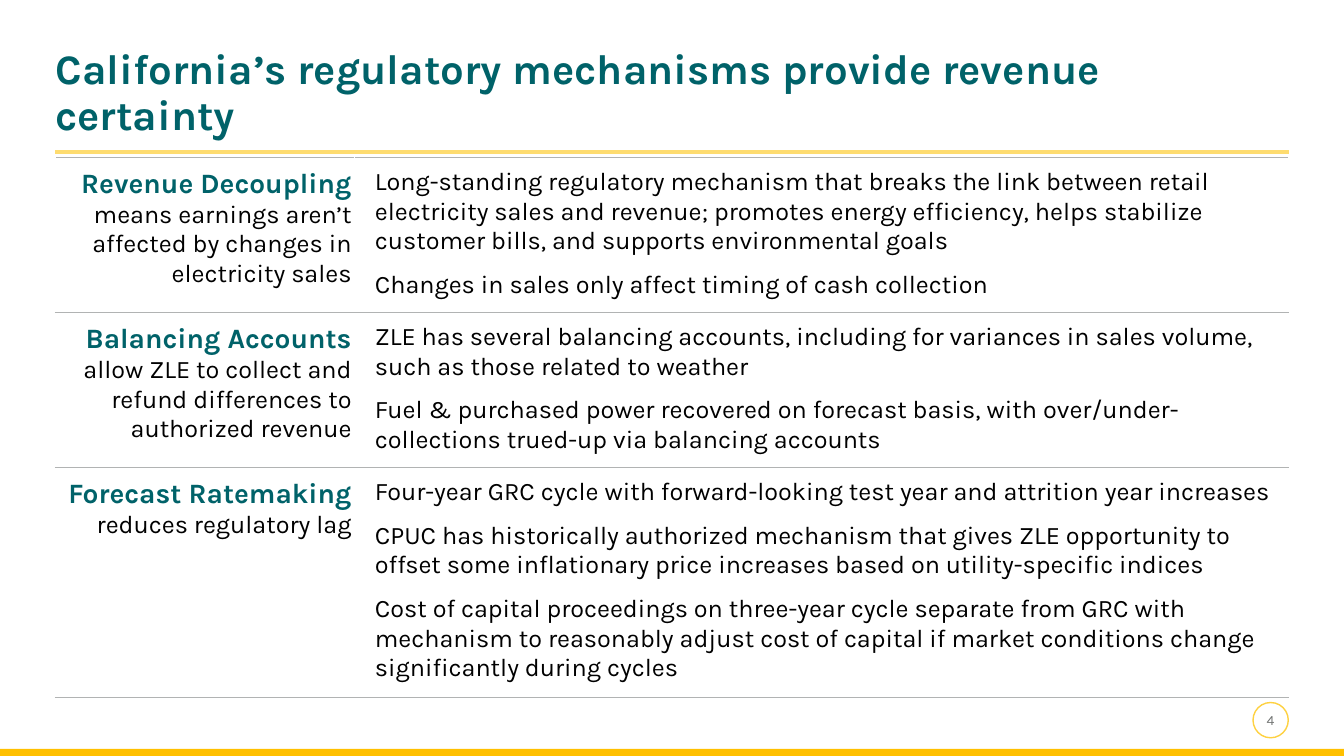
import pptx
import pptx.dml.color
import pptx.enum.shapes
import pptx.enum.text
import pptx.oxml.ns
import pptx.util
from lxml import etree

Pt = pptx.util.Pt
ALIGN = pptx.enum.text.PP_ALIGN
ANCHOR = pptx.enum.text.MSO_ANCHOR
SHAPE = pptx.enum.shapes.MSO_SHAPE

SLIDE_WIDTH, SLIDE_HEIGHT = 960, 540
MARGIN = 39.6
CONTENT_WIDTH = SLIDE_WIDTH - 2 * MARGIN
TEAL, BLACK, GRAY, WHITE = "006269", "000000", "707372", "FFFFFF"
RULE_GRAY, RULE_YELLOW, RING_YELLOW, GOLD = "B1B3B3", "FEDC70", "FED141", "FFC000"

MECHANISMS = [
    (108, "Revenue Decoupling",
     "means earnings aren’t affected by changes in electricity sales",
     ["Long-standing regulatory mechanism that breaks the link between retail "
      "electricity sales and revenue; promotes energy efficiency, helps stabilize "
      "customer bills, and supports environmental goals",
      "Changes in sales only affect timing of cash collection"]),
    (97.2, "Balancing Accounts",
     "allow ZLE to collect and refund differences to authorized revenue",
     ["ZLE has several balancing accounts, including for variances in sales volume, "
      "such as those related to weather",
      "Fuel & purchased power recovered on forecast basis, with over/under-collections "
      "trued-up via balancing accounts"]),
    (158.4, "Forecast Ratemaking",
     "reduces regulatory lag",
     ["Four-year GRC cycle with forward-looking test year and attrition year increases",
      "CPUC has historically authorized mechanism that gives ZLE opportunity to offset "
      "some inflationary price increases based on utility-specific indices",
      "Cost of capital proceedings on three-year cycle separate from GRC with mechanism "
      "to reasonably adjust cost of capital if market conditions change significantly "
      "during cycles"]),
]


def color(hex_code):
    return pptx.dml.color.RGBColor.from_string(hex_code)


def write(paragraph, text, size=18, ink=BLACK, bold=False, align=ALIGN.LEFT,
          before=0, spacing=None, font="Karla"):
    """Fill one paragraph with a formatted run."""
    paragraph.alignment = align
    paragraph.space_before = Pt(before)
    if spacing:
        paragraph.line_spacing = spacing
    run = paragraph.add_run()
    run.text = text
    run.font.name = font
    run.font.size = Pt(size)
    run.font.bold = bold
    run.font.color.rgb = color(ink)


def set_margins(holder, left, top, right, bottom):
    holder.margin_left, holder.margin_top = Pt(left), Pt(top)
    holder.margin_right, holder.margin_bottom = Pt(right), Pt(bottom)


def set_border(cell, side, ink, width):
    properties = cell._tc.get_or_add_tcPr()
    border = etree.SubElement(properties, pptx.oxml.ns.qn(f"a:ln{side}"), w=str(Pt(width)))
    fill = etree.SubElement(border, pptx.oxml.ns.qn("a:solidFill"))
    etree.SubElement(fill, pptx.oxml.ns.qn("a:srgbClr"), val=ink)


class SlideBuilder:
    def __init__(self, slide):
        self.shapes = slide.shapes

    def shape(self, kind, left, top, width, height, fill, line=None):
        shape = self.shapes.add_shape(kind, Pt(left), Pt(top), Pt(width), Pt(height))
        shape.shadow.inherit = False
        shape.fill.solid()
        shape.fill.fore_color.rgb = color(fill)
        if line:
            shape.line.color.rgb = color(line)
            shape.line.width = Pt(1)
        else:
            shape.line.fill.background()
        return shape

    def page_number(self, number, left, top, size):
        badge = self.shape(SHAPE.OVAL, left, top, size, size, WHITE, RING_YELLOW)
        frame = badge.text_frame
        set_margins(frame, 0, 0, 0, 0)
        frame.vertical_anchor = ANCHOR.MIDDLE
        write(frame.paragraphs[0], number, size=10, ink=GRAY, align=ALIGN.CENTER)

    def rule(self, left, top, width):
        rule = self.shapes.add_connector(pptx.enum.shapes.MSO_CONNECTOR.STRAIGHT,
                                         Pt(left), Pt(top), Pt(left + width), Pt(top))
        rule.line.color.rgb = color(RULE_YELLOW)
        rule.line.width = Pt(2.5)
        etree.SubElement(rule._element.spPr, pptx.oxml.ns.qn("a:effectLst"))

    def title(self, text, left, top, width, height):
        frame = self.shapes.add_textbox(Pt(left), Pt(top), Pt(width), Pt(height)).text_frame
        frame.word_wrap = True
        set_margins(frame, 0, 0, 0, 0)
        write(frame.paragraphs[0], text, size=30, ink=TEAL, bold=True, spacing=0.9)

    def cell(self, cell, left_margin):
        """Style a table cell and return its text frame."""
        set_margins(cell, left_margin, 7.2, 2.16, 7.2)
        for side, ink, width in (("L", WHITE, 1), ("R", WHITE, 1),
                                 ("T", RULE_GRAY, 0.75), ("B", RULE_GRAY, 0.75)):
            set_border(cell, side, ink, width)
        cell.fill.background()
        return cell.text_frame

    def mechanism_table(self, mechanisms, left, top, name_width, width):
        height = sum(row_height for row_height, *_ in mechanisms)
        table = self.shapes.add_table(len(mechanisms), 2, Pt(left), Pt(top),
                                      Pt(width), Pt(height)).table
        table.first_row = table.horz_banding = False
        table.columns[0].width = Pt(name_width)
        table.columns[1].width = Pt(width - name_width)
        for row, (row_height, name, meaning, details) in zip(table.rows, mechanisms):
            row.height = Pt(row_height)
            name_cell, detail_cell = row.cells
            summary = self.cell(name_cell, 2.16)
            write(summary.paragraphs[0], name, size=20, ink=TEAL, bold=True, align=ALIGN.RIGHT)
            write(summary.add_paragraph(), meaning, align=ALIGN.RIGHT)
            frame = self.cell(detail_cell, 14.4)
            for index, detail in enumerate(details):
                paragraph = frame.add_paragraph() if index else frame.paragraphs[0]
                write(paragraph, detail, before=10 if index else 0)


def main():
    presentation = pptx.Presentation()
    presentation.slide_width, presentation.slide_height = Pt(SLIDE_WIDTH), Pt(SLIDE_HEIGHT)
    builder = SlideBuilder(presentation.slides.add_slide(presentation.slide_layouts[6]))
    builder.page_number("4", 895, 501.8, 25.2)
    builder.shape(SHAPE.RECTANGLE, 0, 535, SLIDE_WIDTH, 5, GOLD)
    builder.rule(MARGIN, 108.7, CONTENT_WIDTH)
    builder.title("California’s regulatory mechanisms provide revenue certainty",
                  MARGIN, 34.6, CONTENT_WIDTH, 72)
    builder.mechanism_table(MECHANISMS, MARGIN, 112.3, 213.8, CONTENT_WIDTH)
    presentation.save("out.pptx")


if __name__ == "__main__":
    main()
